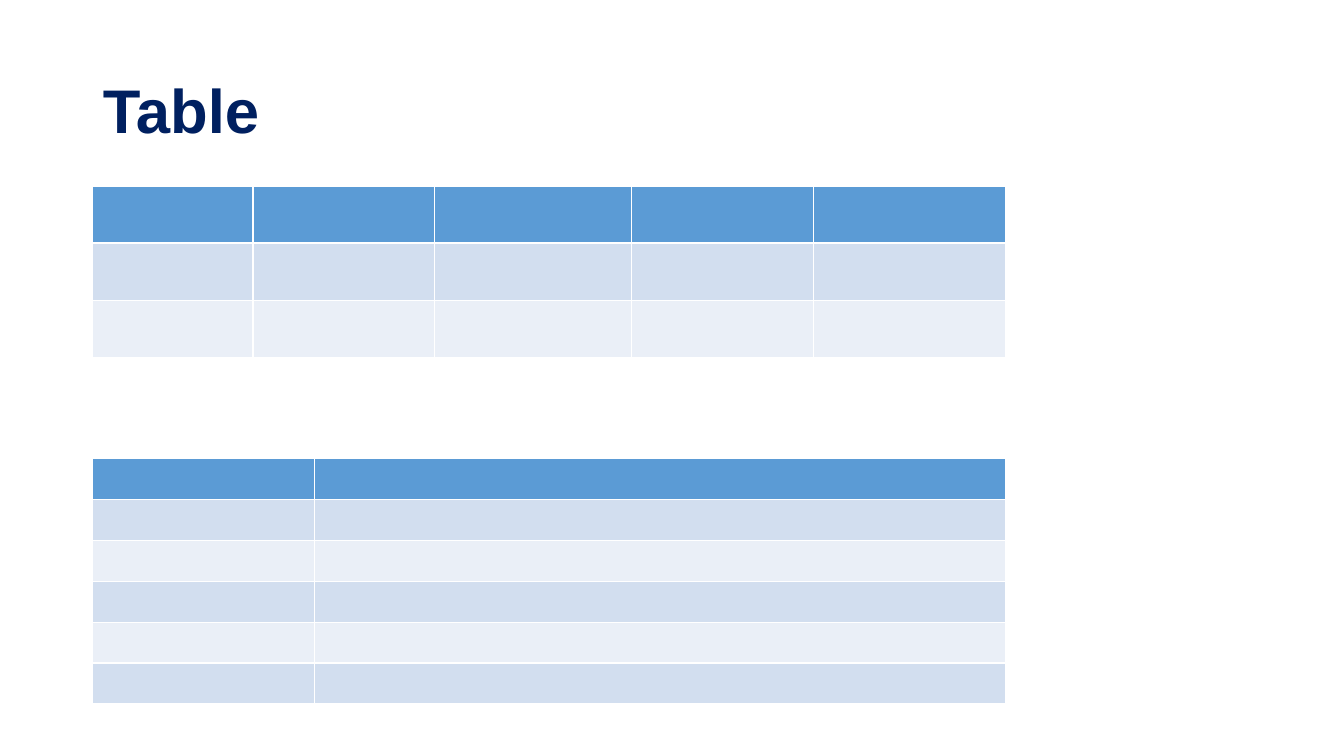
"""Build a slide with a title and two banded, empty tables."""
from dataclasses import dataclass

from pptx import Presentation
from pptx.dml.color import RGBColor
from pptx.enum import text
from pptx.slide import Slide
from pptx.util import Inches, Pt


@dataclass(frozen=True)
class Theme:
    font: str = "Arial"
    title_size: int = 44
    title: str = "002060"
    header: str = "5B9BD5"
    bands: tuple[str, str] = ("D2DEEF", "EAEFF7")


@dataclass(frozen=True)
class Grid:
    top: float
    columns: tuple[float, ...]
    rows: tuple[float, ...]


THEME = Theme()
LEFT = 0.92
GRIDS = (
    Grid(1.85, (1.59, 1.8, 1.95, 1.81, 1.9), (0.56, 0.57, 0.57)),
    Grid(4.55, (2.2, 6.85), (0.4,) * 6),
)


def add_heading(slide: Slide, wording: str) -> None:
    heading = slide.shapes.title
    heading.left, heading.top = Inches(LEFT), Inches(0.4)
    heading.width, heading.height = Inches(11.5), Inches(1.45)
    frame = heading.text_frame
    frame.vertical_anchor = text.MSO_ANCHOR.MIDDLE
    paragraph = frame.paragraphs[0]
    paragraph.alignment = text.PP_ALIGN.LEFT
    paragraph.line_spacing = 0.9
    run = paragraph.add_run()
    run.text = wording
    run.font.name = THEME.font
    run.font.size = Pt(THEME.title_size)
    run.font.bold = True
    run.font.color.rgb = RGBColor.from_string(THEME.title)


def add_grid(slide: Slide, grid: Grid) -> None:
    table = slide.shapes.add_table(
        len(grid.rows), len(grid.columns), Inches(LEFT), Inches(grid.top),
        Inches(sum(grid.columns)), Inches(sum(grid.rows)),
    ).table
    for column, width in zip(table.columns, grid.columns):
        column.width = Inches(width)
    for index, (row, height) in enumerate(zip(table.rows, grid.rows)):
        row.height = Inches(height)
        band = THEME.bands[(index - 1) % 2] if index else THEME.header
        for cell in row.cells:
            cell.fill.solid()
            cell.fill.fore_color.rgb = RGBColor.from_string(band)


def main() -> None:
    deck = Presentation()
    deck.slide_width, deck.slide_height = Inches(13.33), Inches(7.5)
    slide = deck.slides.add_slide(deck.slide_layouts.get_by_name("Title Only"))
    add_heading(slide, "Table")
    for grid in GRIDS:
        add_grid(slide, grid)
    deck.save("out.pptx")


if __name__ == "__main__":
    main()
